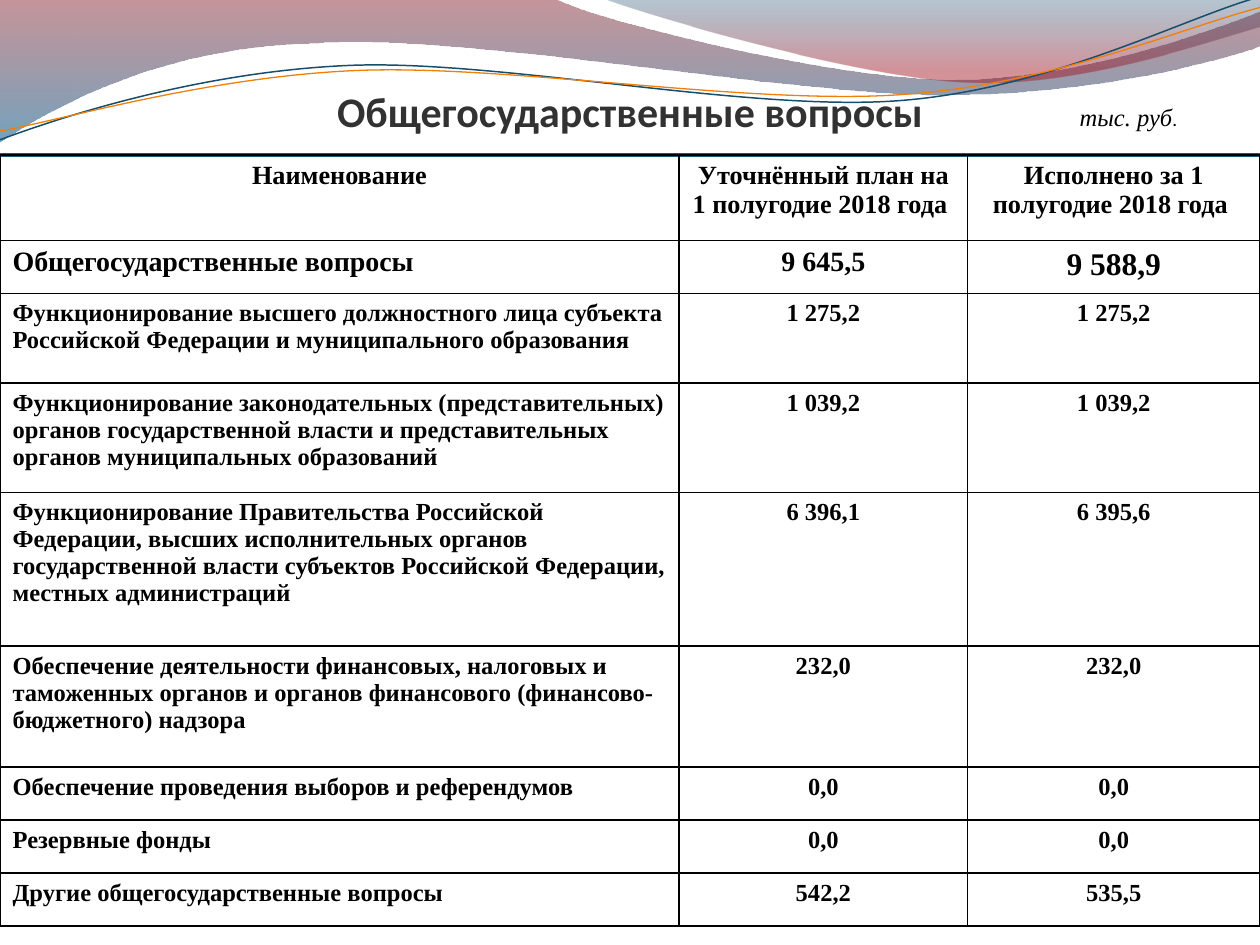
from lxml.etree import SubElement
from pptx import Presentation
from pptx.dml.color import RGBColor
from pptx.enum.shapes import MSO_CONNECTOR
from pptx.enum.text import MSO_ANCHOR, PP_ALIGN
from pptx.oxml.ns import qn
from pptx.util import Inches, Pt

BLACK = RGBColor(0x00, 0x00, 0x00)
TITLE_GREY = RGBColor(0x32, 0x32, 0x32)
DARK_RED = RGBColor(0x7E, 0x16, 0x21)
OCEAN = RGBColor(0x00, 0x56, 0x89)
NAVY = RGBColor(0x09, 0x44, 0x67)
RED = RGBColor(0xA1, 0x0F, 0x1F)
BLUE = RGBColor(0x18, 0x4E, 0x6D)
ORANGE = RGBColor(0xF0, 0x7F, 0x09)
RULE_BLUE = RGBColor(0x1B, 0x58, 0x7C)
SERIF = "Times New Roman"


def add_wave(page, segments, closed):
    """Draw an outline from points (x, y) and Bezier segments of three points."""
    points = [(Inches(segment[i]), Inches(segment[i + 1]))
              for segment in segments for i in range(0, len(segment), 2)]
    builder = page.shapes.build_freeform(*points[0], scale=1.0)
    builder.add_line_segments(points[1:], close=closed)
    wave = builder.convert_to_shape()
    wave.shadow.inherit = False
    # Join each run of three control points into one Bezier segment
    steps = iter(list(wave._element.spPr.iter(qn("a:lnTo"))))
    for segment in segments[1:]:
        first = next(steps)
        if len(segment) == 6:
            first.tag = qn("a:cubicBezTo")
            for _ in range(2):
                step = next(steps)
                first.append(step[0])
                step.getparent().remove(step)
    return wave


def add_span(para, text, size, font=SERIF, color=BLACK, bold=False, italic=False):
    span = para.add_run()
    span.text = text
    span.font.size = Pt(size)
    span.font.name = font
    span.font.color.rgb = color
    span.font.bold = bold
    span.font.italic = italic


deck = Presentation()
deck.slide_width = Inches(10)
deck.slide_height = Inches(7.5)
page = deck.slides.add_slide(deck.slide_layouts[5])

# Translucent waves: outline, then gradient stops (position, colour, opacity %)
filled_waves = [
    ([(0, 0), (4.4, -0.01), (4.76, 0.17, 6.64, 0.63, 7.58, 0.63),
      (8.53, 0.63, 9.58, 0.26, 10, 0.09), (10.01, 0.36),
      (9.83, 0.44, 8.7, 0.76, 7.46, 0.75), (6.22, 0.75, 3.82, 0.28, 2.57, 0.34),
      (1.29, 0.36, 0.46, 0.83, -0.01, 1.13)],
     [(0, DARK_RED, 45), (1, OCEAN, 55)]),
    ([(4.79, -0.01), (5.09, 0.11, 6.82, 0.62, 7.69, 0.65),
      (8.56, 0.69, 9.61, 0.32, 10, 0.21), (10, 0)],
     [(0, NAVY, 30), (0.8, RED, 45)]),
]
for segments, stops in filled_waves:
    wave = add_wave(page, segments, True)
    wave.line.fill.background()
    wave.fill.gradient()
    wave.fill.gradient_angle = 270
    for stop, (position, color, _) in zip(wave.fill.gradient_stops, stops):
        stop.position = position
        stop.color.rgb = color
    colors = wave._element.spPr.iter(qn("a:srgbClr"))
    for node, (_, _, opacity) in zip(list(colors), stops):
        SubElement(node, qn("a:alpha"), val=str(opacity * 1000))

# Thin wave lines
line_waves = [
    ([(0, 1.11), (0.48, 0.93, 1.58, 0.57, 2.77, 0.52),
      (3.95, 0.47, 5.93, 0.89, 7.13, 0.8), (8.33, 0.71, 9.38, 0.15, 9.98, -0.02)],
     BLUE, 0.85),
    ([(0, 1.04), (0.47, 0.96, 1.64, 0.61, 2.83, 0.56),
      (4.03, 0.51, 5.97, 0.84, 7.17, 0.75), (8.36, 0.67, 9.41, 0.21, 10, 0.06)],
     ORANGE, 0.75),
]
for segments, color, width in line_waves:
    wave = add_wave(page, segments, False)
    wave.fill.background()
    wave.line.color.rgb = color
    wave.line.width = Pt(width)

# Rule under the title
rule = page.shapes.add_connector(MSO_CONNECTOR.STRAIGHT, Inches(10), Inches(1.23),
                                 Inches(0), Inches(1.23))
rule.line.color.rgb = RULE_BLUE
rule.line.width = Pt(2)
SubElement(rule._element.spPr, qn("a:effectLst"))

# Budget table: row height, text sizes, cell texts
rows = [
    (0.68, (15, 15, 15), ("Наименование", "Уточнённый план на 1 полугодие 2018 года ",
                          "Исполнено за 1 полугодие 2018 года ")),
    (0.42, (16, 16, 18), ("Общегосударственные вопросы", "9 645,5", "9 588,9")),
    (0.71, (14, 14, 14), ("Функционирование высшего должностного лица субъекта Российской "
                          "Федерации и муниципального образования", "1 275,2", "1 275,2")),
    (0.87, (14, 14, 14), ("Функционирование законодательных (представительных) органов "
                          "государственной власти и представительных органов "
                          "муниципальных образований", "1 039,2", "1 039,2")),
    (1.22, (14, 14, 14), ("Функционирование Правительства Российской Федерации, высших "
                          "исполнительных органов государственной власти субъектов "
                          "Российской Федерации, местных администраций",
                          "6 396,1", "6 395,6")),
    (0.96, (14, 14, 14), ("Обеспечение деятельности финансовых, налоговых и таможенных "
                          "органов и органов финансового (финансово-бюджетного) надзора",
                          "232,0", "232,0")),
    (0.42, (14, 14, 14), ("Обеспечение проведения выборов и референдумов", "0,0", "0,0")),
    (0.42, (14, 14, 14), ("Резервные фонды", "0,0", "0,0")),
    (0.42, (14, 14, 14), ("Другие общегосударственные вопросы", "542,2", "535,5")),
]
table = page.shapes.add_table(len(rows), 3, Inches(0), Inches(1.23),
                              Inches(10), Inches(6.12)).table
table.first_row = False
table.horz_banding = False
for column, width in zip(table.columns, (5.39, 2.29, 2.32)):
    column.width = Inches(width)
for row_index, (height, sizes, texts) in enumerate(rows):
    table.rows[row_index].height = Inches(height)
    for column_index, (size, text) in enumerate(zip(sizes, texts)):
        cell = table.cell(row_index, column_index)
        para = cell.text_frame.paragraphs[0]
        is_name = column_index == 0 and row_index > 0
        para.alignment = PP_ALIGN.LEFT if is_name else PP_ALIGN.CENTER
        add_span(para, text, size, bold=True)
        # Borders must come before the fill in the cell properties
        properties = cell._tc.get_or_add_tcPr()
        for side in ("a:lnL", "a:lnR", "a:lnT", "a:lnB"):
            border = SubElement(properties, qn(side), w=str(Pt(1)))
            border_fill = SubElement(border, qn("a:solidFill"))
            SubElement(border_fill, qn("a:srgbClr"), val=str(BLACK))
        cell.fill.background()

# Unit of measure
box = page.shapes.add_textbox(Inches(8.47), Inches(0.76), Inches(1.42), Inches(0.39))
box.text_frame.word_wrap = True
para = box.text_frame.paragraphs[0]
add_span(para, "тыс. руб", 14, italic=True)
add_span(para, ".", 11, font="Calibri")

# Title, brought in front of the waves
title = page.shapes.title
title.left, title.top = Inches(0), Inches(0.21)
title.width, title.height = Inches(10), Inches(0.87)
frame = title.text_frame
frame.vertical_anchor = MSO_ANCHOR.BOTTOM
frame.margin_left = frame.margin_right = frame.margin_bottom = Inches(0)
frame.margin_top = Inches(0.05)
para = frame.paragraphs[0]
para.alignment = PP_ALIGN.CENTER
add_span(para, "Общегосударственные вопросы", 24, "Calibri", TITLE_GREY, bold=True)
page.shapes._spTree.append(title._element)

deck.save("out.pptx")
